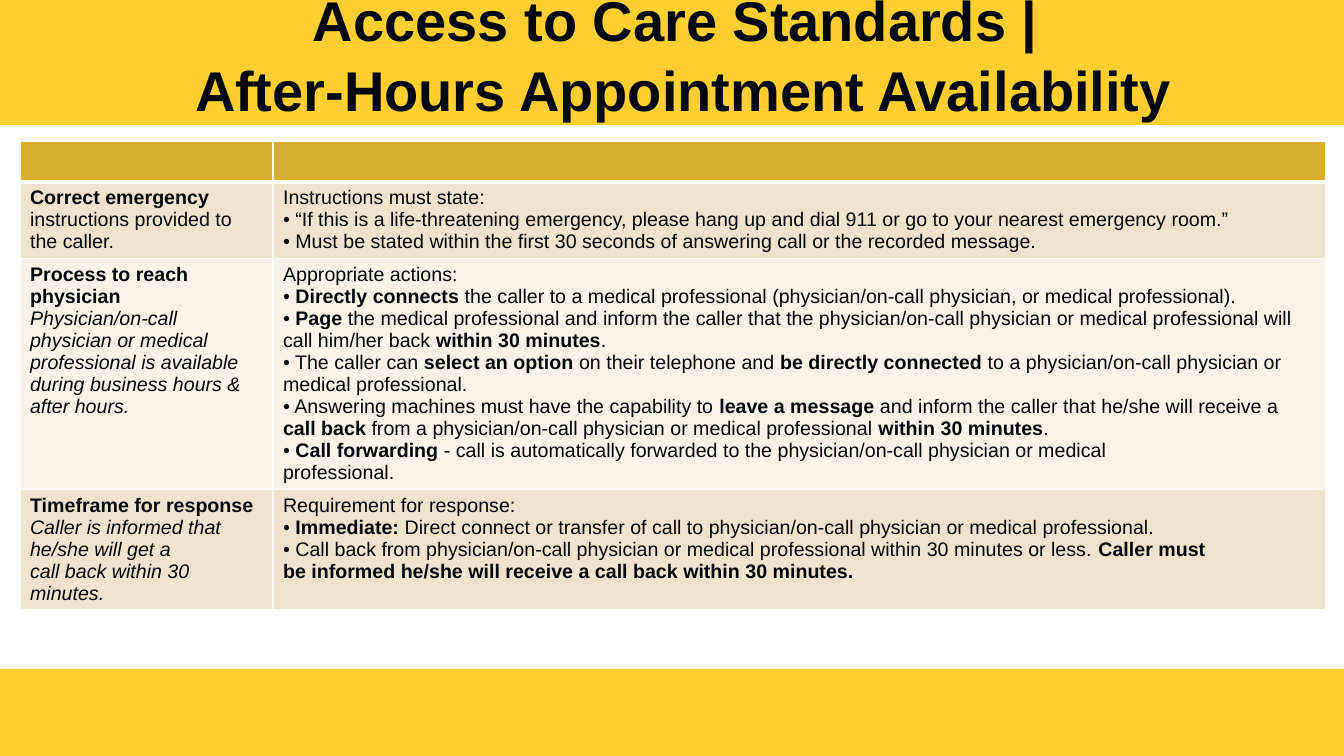
"""Build the slide on after-hours appointment availability standards."""
import dataclasses

import lxml.etree
import pptx
import pptx.dml.color
import pptx.enum.shapes
import pptx.enum.text
import pptx.oxml.ns
import pptx.util

TITLE = ["Access to Care Standards | ", "After-Hours Appointment Availability"]

ROWS = [
    ([], []),
    (
        [[("b", "Correct emergency "), ("", "instructions provided to the caller.")]],
        [
            [("", "Instructions must state:")],
            [("", "• “If this is a life-threatening emergency, please hang up and dial 911 "
                  "or go to your nearest emergency room.”")],
            [("", "• Must be stated within the first 30 seconds of answering call "
                  "or the recorded message.")],
        ],
    ),
    (
        [
            [("b", "Process to reach physician")],
            [("i", "Physician/on-call physician or medical")],
            [("i", "professional is available during business hours & after hours.")],
        ],
        [
            [("", "Appropriate actions:")],
            [("", "• "), ("b", "Directly connects "),
             ("", "the caller to a medical professional "
                  "(physician/on-call physician, or medical professional).")],
            [("", "• "), ("b", "Page "),
             ("", "the medical professional and inform the caller that the physician/on-call "
                  "physician or medical professional will call him/her back "),
             ("b", "within 30 minutes"), ("", ".")],
            [("", "• The caller can "), ("b", "select an option "),
             ("", "on their telephone and "), ("b", "be directly connected "),
             ("", "to a physician/on-call physician or medical professional.")],
            [("", "• Answering machines must have the capability to "),
             ("b", "leave a message "),
             ("", "and inform the caller that he/she will receive a "),
             ("b", "call back "),
             ("", "from a physician/on-call physician or medical professional "),
             ("b", "within 30 minutes"), ("", ".")],
            [("", "• "), ("b", "Call forwarding "),
             ("", "- call is automatically forwarded to the physician/on-call physician "
                  "or medical")],
            [("", "professional.")],
        ],
    ),
    (
        [
            [("b", "Timeframe for response")],
            [("i", "Caller is informed that he/she will get a")],
            [("i", "call back within 30 minutes.")],
        ],
        [
            [("", "Requirement for response:")],
            [("", "• "), ("b", "Immediate: "),
             ("", "Direct connect or transfer of call to physician/on-call physician "
                  "or medical professional.")],
            [("", "• Call back from physician/on-call physician or medical professional "
                  "within 30 minutes or less. "), ("b", "Caller must")],
            [("b", "be informed he/she will receive a call back within 30 minutes.")],
        ],
    ),
]

PAGE_SIZE = (1344, 756)
BARS = [(0, 0, 1344, 125), (0, 669, 1344, 87)]
TITLE_BOX = (30, 18, 1306, 105)
TABLE_CORNER = (20, 141)
COLUMN_WIDTHS = [253, 1053]
ROW_HEIGHTS = [41, 76, 231, 119]


@dataclasses.dataclass(frozen=True)
class Theme:
    font: str = "Arial"
    ink: str = "00080E"
    bar: str = "FFCF31"
    rule: str = "FFFFFF"
    row_fills: tuple = ("D8AE30", "F0E3CD", "F8F2E8", "F0E3CD")
    title_size: int = 40
    body_size: int = 14
    thin: int = 1
    thick: int = 3


THEME = Theme()


def px(length):
    return pptx.util.Emu(round(length * 914400 / 100.8))


def color(value):
    return pptx.dml.color.RGBColor.from_string(value)


def write(frame, paragraphs, size):
    for index, spans in enumerate(paragraphs):
        para = frame.add_paragraph() if index else frame.paragraphs[0]
        for style, text in spans:
            span = para.add_run()
            span.text = text
            font = span.font
            font.name, font.size = THEME.font, pptx.util.Pt(size)
            font.bold, font.italic = style == "b", style == "i"
            font.color.rgb = color(THEME.ink)


def add_title(page):
    title = page.shapes.title
    title.left, title.top, title.width, title.height = map(px, TITLE_BOX)
    frame = title.text_frame
    frame.word_wrap = True
    frame.auto_size = pptx.enum.text.MSO_AUTO_SIZE.NONE
    frame.vertical_anchor = pptx.enum.text.MSO_ANCHOR.BOTTOM
    frame.margin_left = frame.margin_right = frame.margin_top = frame.margin_bottom = 0
    write(frame, [[("b", line)] for line in TITLE], THEME.title_size)
    for para in frame.paragraphs:
        para.alignment = pptx.enum.text.PP_ALIGN.CENTER
    frame.paragraphs[1].space_before = pptx.util.Pt(2)
    return title


def add_bars(page, title):
    for place in BARS:
        bar = page.shapes.add_shape(pptx.enum.shapes.MSO_SHAPE.RECTANGLE, *map(px, place))
        bar.shadow.inherit = False
        bar.fill.solid()
        bar.fill.fore_color.rgb = color(THEME.bar)
        bar.line.fill.background()
        title.element.addprevious(bar.element)


def add_borders(cell, row):
    qn = pptx.oxml.ns.qn
    properties = cell._tc.get_or_add_tcPr()
    heavy_side = {0: "B", 1: "T"}.get(row)
    for side in "LRTB":
        points = THEME.thick if side == heavy_side else THEME.thin
        line = lxml.etree.SubElement(
            properties, qn(f"a:ln{side}"), w=str(pptx.util.Pt(points)))
        fill = lxml.etree.SubElement(line, qn("a:solidFill"))
        lxml.etree.SubElement(fill, qn("a:srgbClr"), val=THEME.rule)


def add_standards(page):
    size = (sum(COLUMN_WIDTHS), sum(ROW_HEIGHTS))
    table = page.shapes.add_table(
        len(ROWS), len(COLUMN_WIDTHS), *map(px, TABLE_CORNER + size)).table
    for column, width in zip(table.columns, COLUMN_WIDTHS):
        column.width = px(width)
    for row, height in zip(table.rows, ROW_HEIGHTS):
        row.height = px(height)
    for row, contents in enumerate(ROWS):
        for column, paragraphs in enumerate(contents):
            cell = table.cell(row, column)
            add_borders(cell, row)
            cell.fill.solid()
            cell.fill.fore_color.rgb = color(THEME.row_fills[row])
            write(cell.text_frame, paragraphs, THEME.body_size)


def main():
    deck = pptx.Presentation()
    deck.slide_width, deck.slide_height = map(px, PAGE_SIZE)
    page = deck.slides.add_slide(deck.slide_layouts.get_by_name("Title Only"))
    title = add_title(page)
    add_bars(page, title)
    add_standards(page)
    deck.save("out.pptx")


if __name__ == "__main__":
    main()
